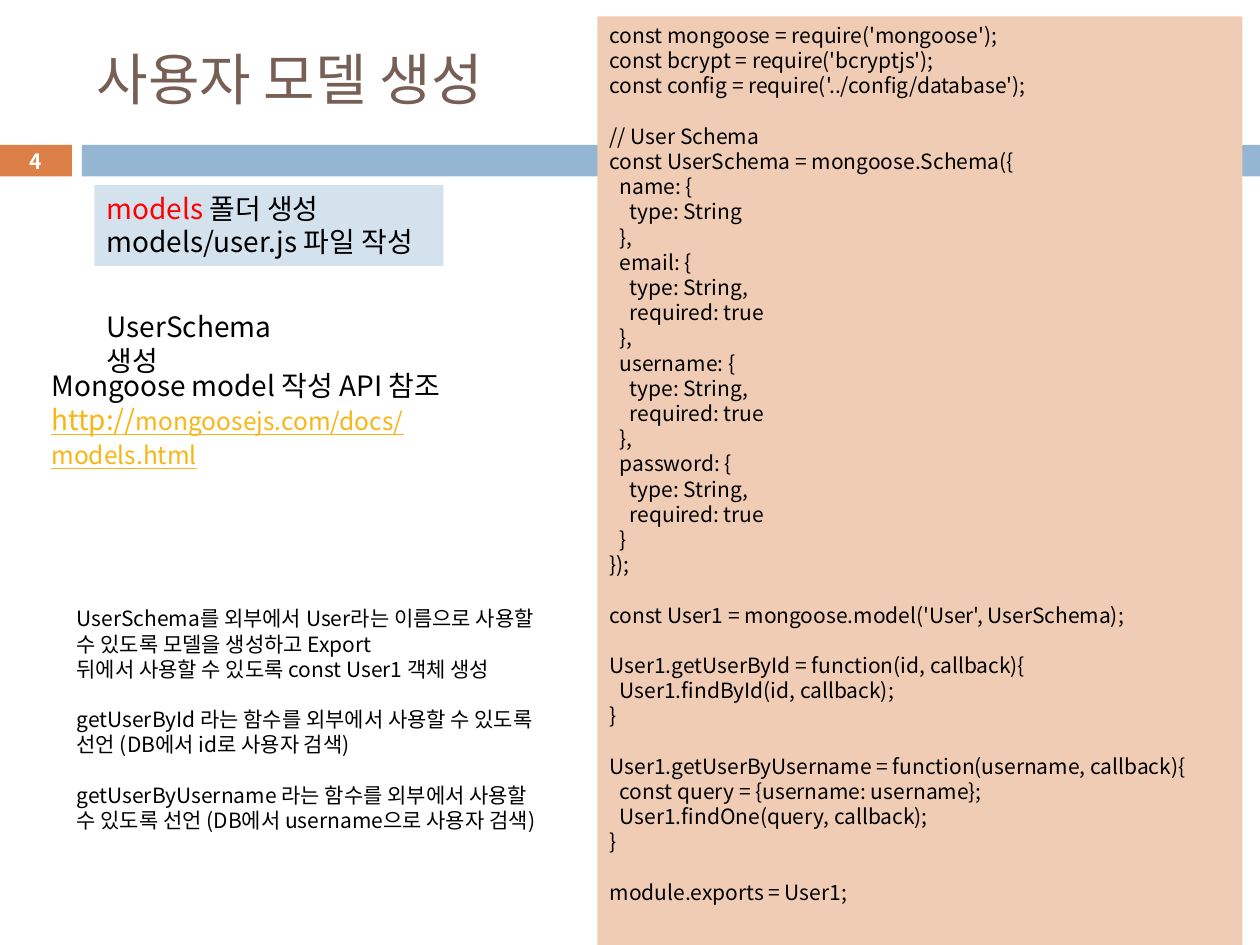
from pptx import Presentation
from pptx import util as u
from pptx.dml.color import RGBColor
from pptx.enum import shapes, text
from pptx.oxml.ns import qn
from lxml import etree

COLUMNS, ROWS = 100, 75
BLACK, WHITE, RED, LINK = "000000", "FFFFFF", "FF0000", "F7B615"
BROWN, ORANGE, BLUE = "775F55", "DD8047", "94B6D2"
PALE_ORANGE, PALE_BLUE = "F1CCB5", "D4E2ED"


def color(value):
    return RGBColor.from_string(value)


class SlideBuilder:
    """Holds the style and the current slide; places are grid columns and rows."""

    font_name = "Noto Sans CJK KR"
    line_height = 1.2
    code_indent = 0.04  # inches for each leading space

    def __init__(self, presentation):
        self.slide = presentation.slides.add_slide(presentation.slide_layouts[6])
        self.column = presentation.slide_width / COLUMNS
        self.row = presentation.slide_height / ROWS

    def place(self, left, top, width, height):
        return (int(left * self.column), int(top * self.row),
                int(width * self.column), int(height * self.row))

    def panel(self, place, fill):
        shape = self.slide.shapes.add_shape(
            shapes.MSO_SHAPE.RECTANGLE, *self.place(*place))
        shape.shadow.inherit = False
        shape.fill.solid()
        shape.fill.fore_color.rgb = color(fill)
        shape.line.fill.background()
        return shape

    def box(self, place):
        return self.slide.shapes.add_textbox(*self.place(*place))

    def style(self, font, size, ink, bold=False):
        font.name, font.size, font.bold = self.font_name, u.Pt(size), bold
        font.color.rgb = color(ink)

    def east_asian(self, run):
        properties = run._r.get_or_add_rPr()
        etree.SubElement(properties, qn("a:ea")).set("typeface", self.font_name)

    def add_text(self, shape, blocks, size, ink=BLACK, bold=False,
                 align=text.PP_ALIGN.LEFT, anchor=text.MSO_ANCHOR.TOP):
        """Add blocks of lines, with one line of space between blocks."""
        frame = shape.text_frame
        frame.word_wrap = True
        frame.vertical_anchor = anchor
        paragraph = None
        for block_number, block in enumerate(blocks):
            for line_number, line in enumerate(block):
                paragraph = frame.add_paragraph() if paragraph else frame.paragraphs[0]
                paragraph.alignment = align
                paragraph.line_spacing = u.Pt(size * self.line_height)
                if block_number and not line_number:
                    paragraph.space_before = u.Pt(size * self.line_height)
                self.style(paragraph.font, size, ink, bold)
                self.fill_line(paragraph, line, size, ink, bold)

    def fill_line(self, paragraph, line, size, ink, bold):
        """A line is a string, or a list of (words, ink, size, underline)."""
        if isinstance(line, str):
            words = line.lstrip()
            indent = (len(line) - len(words)) * self.code_indent
            if indent:
                paragraph._p.get_or_add_pPr().set("marL", str(u.Inches(indent)))
            line = [(words, ink, size, False)]
        for words, run_ink, run_size, underline in line:
            run = paragraph.add_run()
            run.text = words
            self.style(run.font, run_size, run_ink, bold)
            run.font.underline = underline
            self.east_asian(run)


CODE = """const mongoose = require('mongoose');
const bcrypt = require('bcryptjs');
const config = require('../config/database');

// User Schema
const UserSchema = mongoose.Schema({
  name: {
    type: String
  },
  email: {
    type: String,
    required: true
  },
  username: {
    type: String,
    required: true
  },
  password: {
    type: String,
    required: true
  }
});

const User1 = mongoose.model('User', UserSchema);

User1.getUserById = function(id, callback){
  User1.findById(id, callback);
}

User1.getUserByUsername = function(username, callback){
  const query = {username: username};
  User1.findOne(query, callback);
}

module.exports = User1;"""

NOTES = [
    ["UserSchema를 외부에서 User라는 이름으로 사용할 수 있도록 모델을 생성하고 Export",
     "뒤에서 사용할 수 있도록 const User1 객체 생성"],
    ["getUserById 라는 함수를 외부에서 사용할 수 있도록 선언 (DB에서 id로 사용자 검색)"],
    ["getUserByUsername 라는 함수를 외부에서 사용할 수 있도록 선언 "
     "(DB에서 username으로 사용자 검색)"],
]


def main():
    presentation = Presentation()
    presentation.slide_width, presentation.slide_height = u.Inches(10), u.Inches(7.5)
    builder = SlideBuilder(presentation)
    middle = text.MSO_ANCHOR.MIDDLE

    # Header band, title and slide number
    number = builder.panel((-0.1, 11.5, 5.8, 2.5), ORANGE)
    builder.panel((6.5, 11.5, 93.5, 2.5), BLUE)
    builder.add_text(builder.box((6.7, 2.5, 89.2, 7.4)), [["사용자 모델 생성"]], 32,
                     BROWN, anchor=middle)
    builder.add_text(number, [["4"]], 12, WHITE, bold=True,
                     align=text.PP_ALIGN.CENTER, anchor=middle)

    # Code listing
    code_blocks = [block.split("\n") for block in CODE.split("\n\n")]
    builder.add_text(builder.panel((47.4, 1.3, 51.2, 73.7), PALE_ORANGE),
                     code_blocks, 12)

    # Files to create
    builder.add_text(builder.panel((7.5, 14.7, 27.7, 6.4), PALE_BLUE),
                     [[[("models ", RED, 16, False), ("폴더 생성", BLACK, 16, False)],
                       "models/user.js 파일 작성"]], 16)

    # Schema heading, narrow enough to take two lines
    heading = builder.box((7.5, 24.1, 19.8, 3.7))
    heading.text_frame.margin_right = u.Inches(0.25)
    builder.add_text(heading, [["UserSchema 생성"]], 16)

    # Explanations
    builder.add_text(builder.box((5.1, 47.6, 39.4, 21.2)), NOTES, 12)

    # Reference address
    builder.add_text(builder.box((3.1, 28.8, 40.9, 6.4)),
                     [["Mongoose model 작성 API 참조",
                       [("http://", LINK, 16, True),
                        ("mongoosejs.com/docs/models.html", LINK, 14, True)]]], 16)

    presentation.save("out.pptx")


if __name__ == "__main__":
    main()
